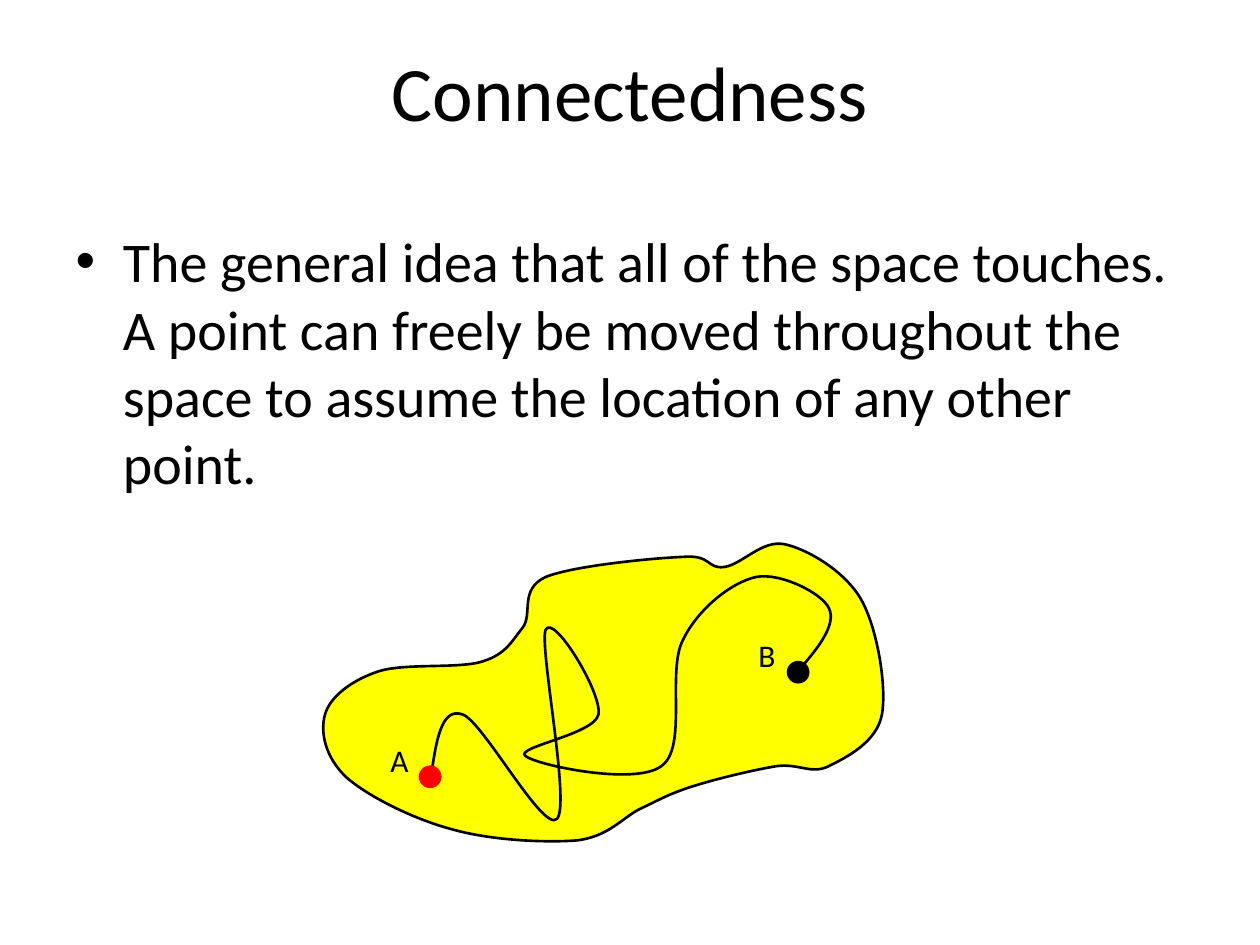
from dataclasses import dataclass

from lxml import etree
from pptx import Presentation
from pptx.dml.color import RGBColor
from pptx.enum.shapes import MSO_SHAPE
from pptx.enum.text import MSO_ANCHOR, PP_ALIGN
from pptx.oxml.ns import qn
from pptx.util import Inches, Pt

ELLIPSE = MSO_SHAPE.OVAL
TOP = MSO_ANCHOR.TOP
CENTER, LEFT = PP_ALIGN.CENTER, PP_ALIGN.LEFT


@dataclass(frozen=True)
class Theme:
    font: str = "Calibri"
    black: RGBColor = RGBColor(0, 0, 0)
    yellow: RGBColor = RGBColor(255, 255, 0)
    red: RGBColor = RGBColor(255, 0, 0)
    title: Pt = Pt(44)
    body: Pt = Pt(32)
    label: Pt = Pt(18)
    curve: Pt = Pt(1.5)
    dot: Pt = Pt(0.75)


theme = Theme()

# Each row after the start is one Bezier segment: two controls and an end point.
SPACE_START = (2.58, 5.67)
SPACE = [
    [(2.62, 5.53), (2.79, 5.40), (3.00, 5.33)],
    [(3.21, 5.26), (3.64, 5.31), (3.83, 5.25)],
    [(4.02, 5.19), (4.06, 5.09), (4.15, 4.98)],
    [(4.23, 4.87), (4.12, 4.68), (4.33, 4.58)],
    [(4.55, 4.49), (5.18, 4.43), (5.42, 4.42)],
    [(5.65, 4.40), (5.61, 4.52), (5.75, 4.50)],
    [(5.89, 4.48), (6.05, 4.28), (6.23, 4.32)],
    [(6.41, 4.36), (6.70, 4.53), (6.83, 4.75)],
    [(6.96, 4.97), (7.04, 5.44), (7.00, 5.67)],
    [(6.96, 5.89), (6.72, 6.01), (6.58, 6.08)],
    [(6.44, 6.15), (6.35, 6.06), (6.17, 6.08)],
    [(5.98, 6.11), (5.65, 6.19), (5.47, 6.25)],
    [(5.29, 6.31), (5.23, 6.35), (5.08, 6.42)],
    [(4.94, 6.49), (4.83, 6.64), (4.58, 6.67)],
    [(4.33, 6.69), (3.89, 6.67), (3.58, 6.58)],
    [(3.28, 6.50), (2.92, 6.32), (2.75, 6.17)],
    [(2.58, 6.01), (2.54, 5.81), (2.58, 5.67)],
]
ROUTE_START = (3.42, 6.17)
ROUTE = [
    [(3.46, 5.89), (3.50, 5.61), (3.67, 5.67)],
    [(3.83, 5.72), (4.31, 6.61), (4.42, 6.50)],
    [(4.53, 6.39), (4.28, 5.14), (4.33, 5.00)],
    [(4.39, 4.86), (4.78, 5.50), (4.75, 5.67)],
    [(4.72, 5.83), (4.08, 5.93), (4.17, 6.00)],
    [(4.25, 6.07), (5.04, 6.24), (5.25, 6.08)],
    [(5.46, 5.93), (5.29, 5.33), (5.42, 5.08)],
    [(5.54, 4.83), (5.81, 4.62), (6.00, 4.58)],
    [(6.19, 4.54), (6.53, 4.71), (6.58, 4.83)],
    [(6.64, 4.96), (6.49, 5.15), (6.33, 5.33)],
]

prs = Presentation()
prs.slide_width, prs.slide_height = Inches(10), Inches(7.5)
s = prs.slides.add_slide(prs.slide_layouts[1])


def add_curve(start, segments, closed):
    """Draw a smooth freeform by turning each three line steps into a Bezier."""
    points = [(Inches(x), Inches(y)) for seg in segments for x, y in seg]
    fb = s.shapes.build_freeform(Inches(start[0]), Inches(start[1]))
    fb.add_line_segments(points, close=closed)
    sp = fb.convert_to_shape()
    steps = list(sp._element.iter(qn("a:lnTo")))
    for i in range(0, len(steps), 3):
        bezier = etree.Element(qn("a:cubicBezTo"))
        steps[i].addprevious(bezier)
        for step in steps[i:i + 3]:
            bezier.append(step[0])
            step.getparent().remove(step)
    sp.shadow.inherit = False
    sp.line.color.rgb = theme.black
    sp.line.width = theme.curve
    return sp


def set_text(sp, text, size, align):
    tf = sp.text_frame
    tf.text = text
    tf.word_wrap = True
    tf.vertical_anchor = TOP
    p = tf.paragraphs[0]
    p.alignment = align
    font = p.runs[0].font
    font.name, font.size, font.color.rgb = theme.font, size, theme.black


space = add_curve(SPACE_START, SPACE, closed=True)
space.fill.solid()
space.fill.fore_color.rgb = theme.yellow

title, body = s.shapes.title, s.placeholders[1]
title.left, title.top = Inches(0.5), Inches(0.3)
title.width, title.height = Inches(9), Inches(1.25)
set_text(title, "Connectedness", theme.title, CENTER)

body.left, body.top = Inches(0.5), Inches(1.75)
body.width, body.height = Inches(9), Inches(2.25)
set_text(
    body,
    "The general idea that all of the space touches. A point can freely be "
    "moved throughout the space to assume the location of any other point.",
    theme.body, LEFT,
)

route = add_curve(ROUTE_START, ROUTE, closed=False)
route.fill.background()

for name, x, y in [("A", 3, 5.83), ("B", 5.92, 5)]:
    label = s.shapes.add_textbox(Inches(x), Inches(y), Inches(0.33), Inches(0.4))
    set_text(label, name, theme.label, LEFT)

for x, y, color in [(6.25, 5.25, theme.black), (3.33, 6.08, theme.red)]:
    dot = s.shapes.add_shape(ELLIPSE, Inches(x), Inches(y), Inches(0.17), Inches(0.17))
    dot.shadow.inherit = False
    dot.fill.solid()
    dot.fill.fore_color.rgb = color
    dot.line.color.rgb = color
    dot.line.width = theme.dot

# The yellow space lies behind the title and the list.
s.shapes._spTree.insert(2, space._element)

prs.save("out.pptx")
